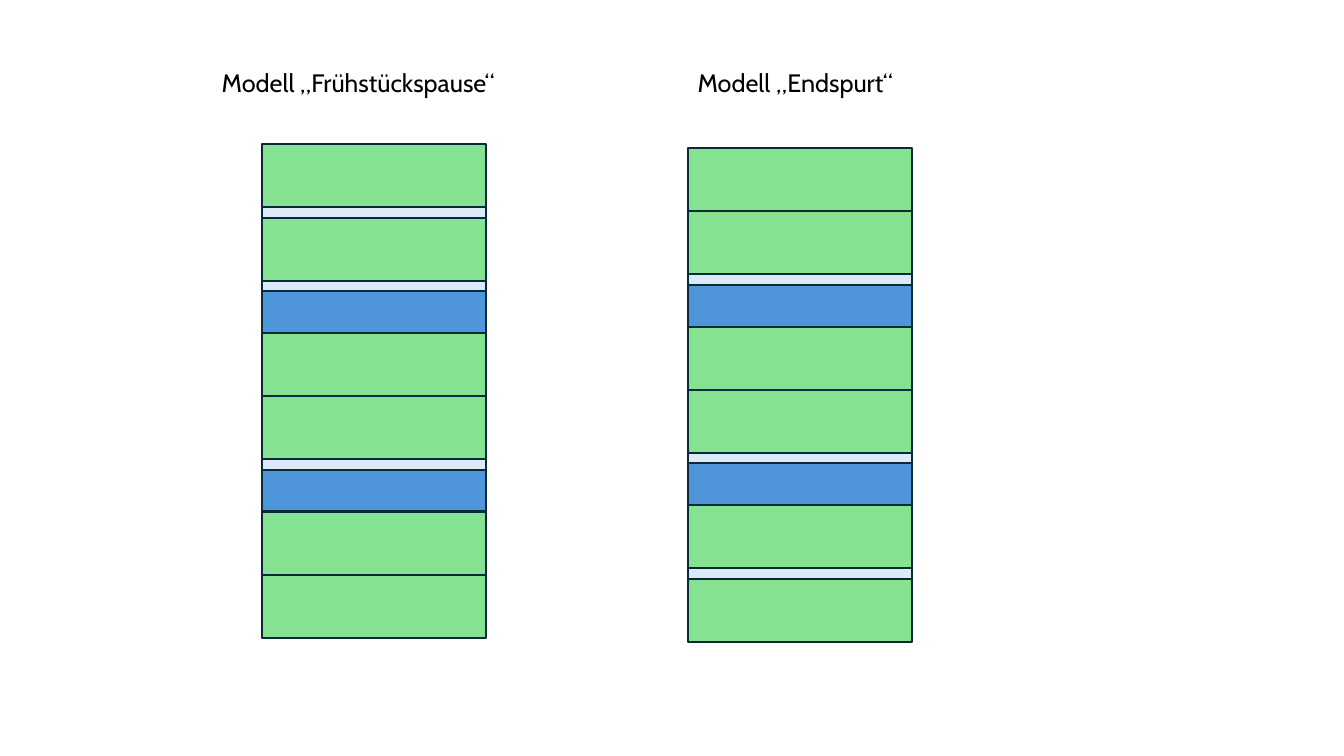
from pptx import Presentation
from pptx.dml.color import RGBColor
from pptx.enum.shapes import MSO_SHAPE
from pptx.enum.text import MSO_AUTO_SIZE
from pptx.util import Inches, Pt

WIDTH, HEIGHT = Inches(13.33), Inches(7.5)
ROW = HEIGHT / 72
BLOCK_WIDTH = WIDTH / 6
COLORS = {
    "lesson": "84E291",
    "break": "4E95D9",
    "pause": "DCEAF7",
    "line": "092A39",
    "text": "000000",
}
ROWS = {"lesson": 6, "break": 4, "pause": 1}

BREAKFAST = ["lesson", "pause", "lesson", "pause", "break", "lesson",
             "lesson", "pause", "break", "lesson", "lesson"]
FINAL_SPURT = ["lesson", "lesson", "pause", "break", "lesson", "lesson",
               "pause", "break", "lesson", "pause", "lesson"]


def color(name):
    return RGBColor.from_string(COLORS[name])


def add_block(slide, kind, left, top, height):
    sp = slide.shapes.add_shape(MSO_SHAPE.RECTANGLE, int(left), int(top),
                                int(BLOCK_WIDTH), int(height))
    sp.shadow.inherit = False
    sp.fill.solid()
    sp.fill.fore_color.rgb = color(kind)
    sp.line.color.rgb = color("line")
    sp.line.width = Pt(1.5)


def add_schedule(slide, kinds, left, top):
    """Stack the blocks of a school day downwards from top."""
    for kind in kinds:
        height = ROWS[kind] * ROW
        add_block(slide, kind, left, top, height)
        top += height


def add_heading(slide, text, left, width):
    box = slide.shapes.add_textbox(left, Inches(0.62), width, Inches(0.4))
    tf = box.text_frame
    tf.word_wrap = True
    tf.auto_size = MSO_AUTO_SIZE.SHAPE_TO_FIT_TEXT
    tf.text = text
    font = tf.paragraphs[0].runs[0].font
    font.name = "Cabin"
    font.size = Pt(18)
    font.color.rgb = color("text")


def main():
    prs = Presentation()
    prs.slide_width, prs.slide_height = WIDTH, HEIGHT
    slide = prs.slides.add_slide(prs.slide_layouts[6])

    add_schedule(slide, BREAKFAST, Inches(2.6), Inches(1.43))
    add_heading(slide, "Modell „Frühstückspause“", Inches(2.1), Inches(3.22))

    add_schedule(slide, FINAL_SPURT, Inches(6.82), Inches(1.47))
    add_heading(slide, "Modell „Endspurt“", Inches(6.82), Inches(3.55))

    prs.save("out.pptx")


if __name__ == "__main__":
    main()
